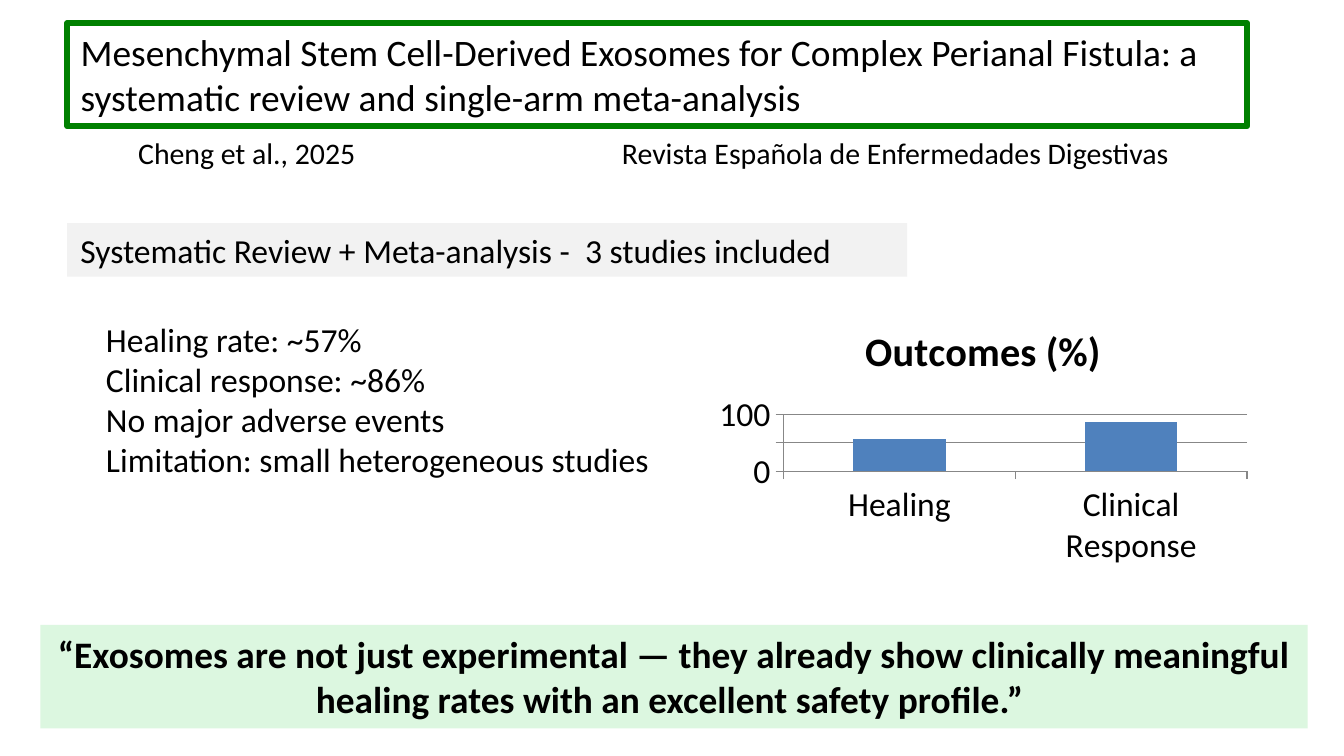
"""Build a one-slide summary of a meta-analysis on exosomes for perianal fistula."""
from pptx import Presentation
from pptx.chart.data import CategoryChartData
from pptx.dml.color import RGBColor
from pptx.enum.chart import XL_CHART_TYPE, XL_TICK_MARK
from pptx.enum.shapes import MSO_SHAPE
from pptx.enum.text import MSO_ANCHOR, MSO_AUTO_SIZE, PP_ALIGN
from pptx.util import Inches, Pt

COLUMN = XL_CHART_TYPE.COLUMN_CLUSTERED
OUTSIDE = XL_TICK_MARK.OUTSIDE
RECT = MSO_SHAPE.RECTANGLE
TOP = MSO_ANCHOR.TOP
NO_FIT = MSO_AUTO_SIZE.NONE
LEFT, CENTER = PP_ALIGN.LEFT, PP_ALIGN.CENTER
FONT = "Calibri"
COLORS = {
    "text": "000000",
    "frame": "008000",
    "band": "F2F2F2",
    "quote": "DCF7E0",
    "bar": "4F81BD",
    "grid": "878787",
}


def rgb(name):
    return RGBColor.from_string(COLORS[name])


def write(shape, lines, size, bold=False, align=LEFT, level=0, wrap=True):
    tf = shape.text_frame
    frame_format = {"auto_size": NO_FIT, "word_wrap": wrap, "vertical_anchor": TOP}
    for key, value in frame_format.items():
        setattr(tf, key, value)
    tf.text = "\n".join(lines)
    for p in tf.paragraphs:
        p.level = level
        p.alignment = align
        font_format = {"name": FONT, "size": Pt(size), "bold": bold}
        for key, value in font_format.items():
            setattr(p.font, key, value)
        p.font.color.rgb = rgb("text")


prs = Presentation()
prs.slide_width = Inches(10)
prs.slide_height = Inches(10 * 9 / 16)
s = prs.slides.add_slide(prs.slide_layouts[5])

title = s.shapes.title
title_box = {"left": 0.5, "top": 0.17, "width": 8.78, "height": 0.77}
for key, value in title_box.items():
    setattr(title, key, Inches(value))
title.line.color.rgb = rgb("frame")
title.line.width = Pt(3)
write(title, ["Mesenchymal Stem Cell-Derived Exosomes for Complex Perianal Fistula: "
              "a systematic review and single-arm meta-analysis"], 20)

findings = [
    "Healing rate: ~57%",
    "Clinical response: ~86%",
    "No major adverse events",
    "Limitation: small heterogeneous studies",
]
texts = [
    ((0.93, 0.95, 1.84, 0.37), ["Cheng et al., 2025"], 16, {"wrap": False}),
    ((4.53, 0.95, 4.33, 0.37), ["Revista Española de Enfermedades Digestivas"], 16,
     {"wrap": False}),
    ((0.19, 2.32, 5.35, 1.31), findings, 18, {"level": 1}),
]
for box, lines, size, options in texts:
    tb = s.shapes.add_textbox(*map(Inches, box))
    write(tb, lines, size, **options)

quote = ("“Exosomes are not just experimental — they already show clinically "
         "meaningful healing rates with an excellent safety profile.” ")
bands = [
    ((0.5, 1.66, 6.25, 0.4), "band",
     "Systematic Review + Meta-analysis -  3 studies included", 18, {}),
    ((0.3, 4.65, 9.43, 0.77), "quote", quote, 20, {"bold": True, "align": CENTER}),
]
for box, color, text, size, options in bands:
    sp = s.shapes.add_shape(RECT, *map(Inches, box))
    sp.shadow.inherit = False
    sp.fill.solid()
    sp.fill.fore_color.rgb = rgb(color)
    sp.line.fill.background()
    write(sp, [text], size, **options)

data = CategoryChartData()
data.categories = ["Healing", "Clinical Response"]
data.add_series("Outcomes (%)", (57, 86))
chart_box = map(Inches, (5.27, 2.25, 4.09, 2))
chart = s.shapes.add_chart(COLUMN, *chart_box, data).chart
chart.has_legend = False
chart.font.name = FONT
chart.font.size = Pt(18)
chart.font.color.rgb = rgb("text")

chart.has_title = True
tf = chart.chart_title.text_frame
tf.text = "Outcomes (%)"
title_format = {"name": FONT, "size": Pt(21.6), "bold": True}
for key, value in title_format.items():
    setattr(tf.paragraphs[0].font, key, value)
tf.paragraphs[0].font.color.rgb = rgb("text")
chart.chart_title.include_in_layout = False

for axis in (chart.category_axis, chart.value_axis):
    axis.major_tick_mark = OUTSIDE
    axis.format.line.color.rgb = rgb("grid")
chart.value_axis.has_major_gridlines = True
chart.value_axis.major_gridlines.format.line.color.rgb = rgb("grid")

plot = chart.plots[0]
plot.vary_by_categories = False
plot.gap_width = 150
bars = plot.series[0].format.fill
bars.solid()
bars.fore_color.rgb = rgb("bar")

prs.save("out.pptx")
